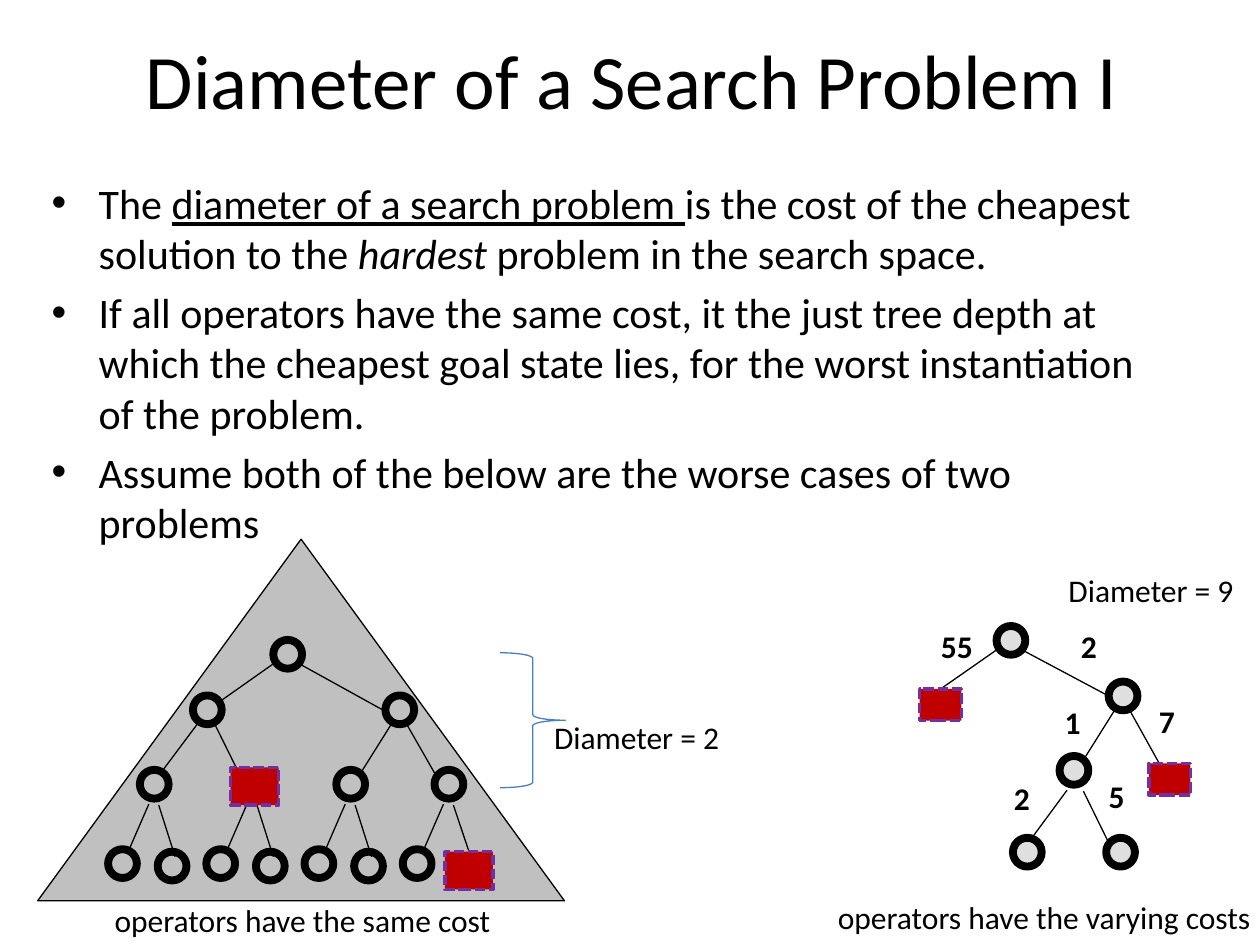
from lxml import etree
from pptx import Presentation
from pptx.dml.color import RGBColor
from pptx.enum.dml import MSO_LINE
from pptx.enum.shapes import MSO_CONNECTOR, MSO_SHAPE
from pptx.enum.text import MSO_ANCHOR, PP_ALIGN
from pptx.oxml.ns import qn
from pptx.util import Cm, Pt

OVAL, RECTANGLE = MSO_SHAPE.OVAL, MSO_SHAPE.RECTANGLE
TRIANGLE, BRACE = MSO_SHAPE.ISOSCELES_TRIANGLE, MSO_SHAPE.RIGHT_BRACE
STRAIGHT, DASH = MSO_CONNECTOR.STRAIGHT, MSO_LINE.SQUARE_DOT
MIDDLE, CENTER = MSO_ANCHOR.MIDDLE, PP_ALIGN.CENTER
TOP_SIDE = 0

FONT = "Calibri"
COLORS = {"ink": "000000", "node": "C0C0C0", "goal": "C00000",
          "goal_edge": "7030A0", "brace": "4B7EBC"}
NODE_SIZE = 0.58
LEVEL_LEFT, LEVEL_TOP, LEVEL_STEP = 2.82, 15.52, 1.98

TITLE = "Diameter of a Search Problem I"
BULLETS = [
    [("The ", {}), ("diameter of a search problem ", {"underline": True}),
     ("is the cost of the cheapest solution to the ", {}),
     ("hardest ", {"italic": True}), ("problem in the search space.", {})],
    [("If all operators have the same cost, it the just tree depth at which "
      "the cheapest goal state lies, for the worst instantiation of the problem.", {})],
    [("Assume both of the below are the worse cases of two problems", {})],
]
SAME_COST_NODES = [(5.51, 12.9), (3.89, 14.02), (7.77, 14.02)]
SAME_COST_EDGES = [
    (5.54, 13.36, 4.42, 14.15), (6.05, 13.39, 7.75, 14.33),
    (3.99, 14.58, 3.25, 15.57), (4.32, 14.58, 4.85, 15.65),
    (7.9, 14.58, 7.26, 15.6), (8.2, 14.6, 8.81, 15.67),
]
VARYING_NODES = [(20.09, 12.62), (22.35, 13.74), (21.36, 15.24),
                 (20.42, 16.89), (22.3, 16.89)]
VARYING_EDGES = [
    (20.62, 13.11, 22.33, 14.02), (22.48, 14.3, 21.84, 15.32),
    (22.78, 14.33, 23.37, 15.39), (21.51, 15.93, 20.78, 16.92),
    (21.84, 15.95, 22.35, 16.99),
]
EDGE_COSTS = [("55", 18.72, 12.52), ("2", 21.54, 12.52), ("1", 21.21, 14.05),
              ("7", 23.11, 14.02), ("2", 20.19, 15.57), ("5", 22.1, 15.54)]
CAPTIONS = [("operators have the same cost", 2.06, 18.03, 8.18),
            ("operators have the varying costs", 16.64, 17.98, 8.92),
            ("Diameter = 2", 10.92, 14.35, 4.04),
            ("Diameter = 9", 21.29, 11.38, 4.04)]


def rgb(name):
    """Return the named colour."""
    return RGBColor.from_string(COLORS[name])


def add_span(para, text, size, **formats):
    """Add a run with the given font attributes."""
    span = para.add_run()
    span.text = text
    span.font.color.rgb = rgb("ink")
    for key, value in {"name": FONT, "size": Pt(size), **formats}.items():
        setattr(span.font, key, value)


def add_title(page):
    """Place and fill the title placeholder."""
    title = page.shapes.title
    places = {"left": 1.32, "top": 0, "width": 22.86, "height": 3.18}
    for key, value in places.items():
        setattr(title, key, Cm(value))
    title.text_frame.vertical_anchor = MIDDLE
    para = title.text_frame.paragraphs[0]
    para.alignment = CENTER
    add_span(para, TITLE, 44)


def add_bullets(page):
    """Add the bulleted definition text."""
    box = page.shapes.add_textbox(Cm(0.79), Cm(3.45), Cm(22.86), Cm(12.57))
    frame = box.text_frame
    frame.word_wrap = True
    for index, spans in enumerate(BULLETS):
        para = frame.add_paragraph() if index else frame.paragraphs[0]
        para.space_before = Pt(4.8)
        properties = para._p.get_or_add_pPr()
        properties.set("marL", str(Cm(0.95)))
        properties.set("indent", str(-Cm(0.95)))
        etree.SubElement(properties, qn("a:buFont"), typeface="Arial")
        etree.SubElement(properties, qn("a:buChar"), char="•")
        for text, formats in spans:
            add_span(para, text, 24, **formats)


def add_label(page, text, left, top, width, bold=False):
    """Add a one-line text label."""
    box = page.shapes.add_textbox(Cm(left), Cm(top), Cm(width), Cm(1.02))
    box.text_frame.word_wrap = False
    add_span(box.text_frame.paragraphs[0], text, 18, bold=bold)


def add_figure(page, kind, place, fill, line, weight):
    """Add a preset shape with its fill and outline."""
    figure = page.shapes.add_shape(kind, *map(Cm, place))
    figure.shadow.inherit = False
    if fill:
        figure.fill.solid()
        figure.fill.fore_color.rgb = rgb(fill)
    else:
        figure.fill.background()
    figure.line.color.rgb = rgb(line)
    figure.line.width = Pt(weight)
    return figure


def add_node(page, left, top):
    """Add a ring with a half-transparent centre."""
    node = add_figure(page, OVAL, (left, top, NODE_SIZE, NODE_SIZE), "node", "ink", 4.5)
    color = node.fill._xPr.find(qn("a:solidFill"))[0]
    etree.SubElement(color, qn("a:alpha"), val="50000")


def add_goal(page, left, top, width, height):
    """Add a dashed goal state."""
    goal = add_figure(page, RECTANGLE, (left, top, width, height), "goal", "goal_edge", 2)
    goal.line.dash_style = DASH
    return goal


def add_edge(page, *ends):
    """Add a thin line between two points."""
    edge = page.shapes.add_connector(STRAIGHT, *map(Cm, ends))
    edge.line.color.rgb = rgb("ink")
    edge.line.width = Pt(0.75)
    etree.SubElement(edge._element.spPr, qn("a:effectLst"))
    return edge


def add_same_cost_tree(page):
    """Draw the tree whose operators all cost the same."""
    add_figure(page, TRIANGLE, (0.76, 10.87, 10.62, 7.29), "node", "ink", 0.75)
    for place in SAME_COST_NODES:
        add_node(page, *place)
    for ends in SAME_COST_EDGES:
        add_edge(page, *ends)
    for index in range(4):
        left = LEVEL_LEFT + index * LEVEL_STEP
        if index != 1:
            add_node(page, left, LEVEL_TOP)
        add_node(page, left - 0.64, 17.12)
        if index != 3:
            add_node(page, left + 0.36, 17.17)
        add_edge(page, left + 0.18, 16.21, left - 0.25, 17.2)
        last_edge = add_edge(page, left + 0.38, 16.23, left + 0.71, 17.27)
    add_goal(page, 4.65, 15.47, 0.97, 0.76)
    last_edge.end_connect(add_goal(page, 8.97, 17.17, 0.97, 0.76), TOP_SIDE)
    add_figure(page, BRACE, (10.08, 13.16, 1.32, 2.72), None, "brace", 0.75)


def add_varying_cost_tree(page):
    """Draw the tree whose operators differ in cost."""
    for place in VARYING_NODES:
        add_node(page, *place)
    for ends in VARYING_EDGES:
        add_edge(page, *ends)
    costly_edge = add_edge(page, 20.12, 13.08, 19, 13.87)
    add_goal(page, 23.16, 15.39, 0.84, 0.64)
    costly_edge.end_connect(add_goal(page, 18.54, 13.89, 0.84, 0.64), TOP_SIDE)
    for text, left, top in EDGE_COSTS:
        add_label(page, text, left, top, 0.5 + 0.35 * len(text), bold=True)


def main():
    """Build and save the slide."""
    deck = Presentation()
    deck.slide_width, deck.slide_height = Cm(25.4), Cm(19.05)
    page = deck.slides.add_slide(deck.slide_layouts[5])
    add_title(page)
    add_bullets(page)
    add_varying_cost_tree(page)
    add_same_cost_tree(page)
    for caption in CAPTIONS:
        add_label(page, *caption)
    deck.save("out.pptx")


if __name__ == "__main__":
    main()
